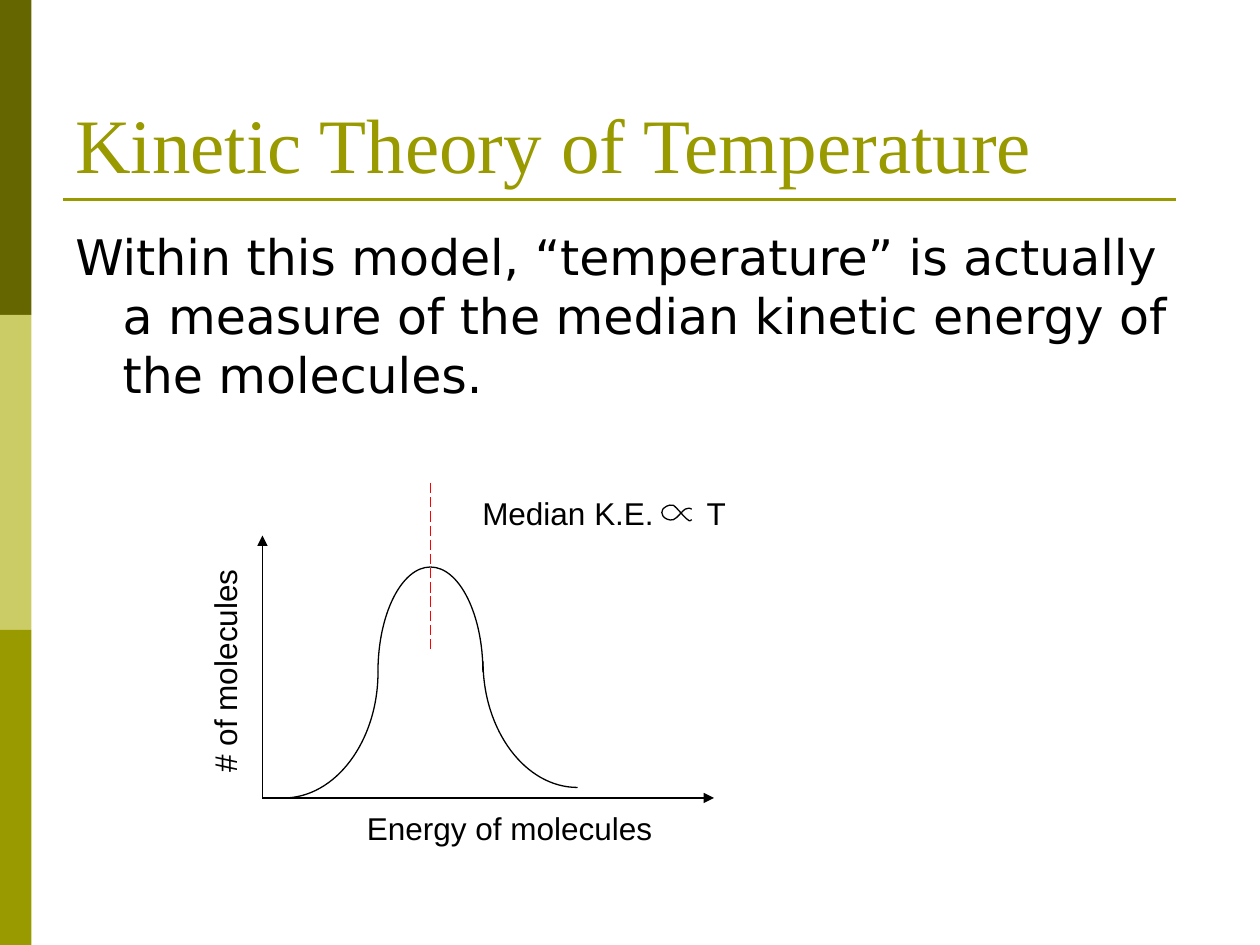
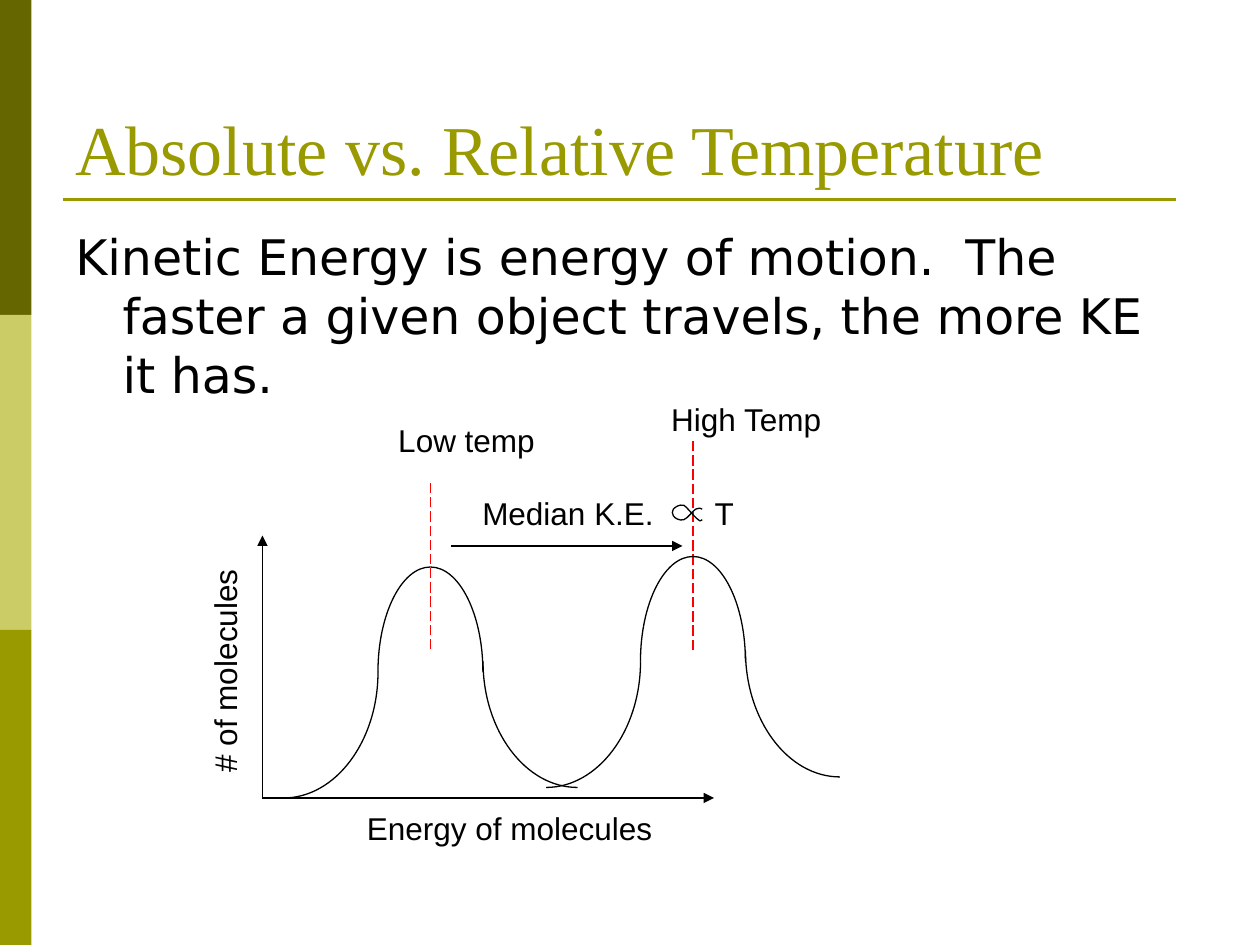
from lxml import etree
from pptx import Presentation
from pptx import util as u
from pptx.dml import color
from pptx.enum import dml, shapes, text
from pptx.oxml import ns

PX = 9525  # 96 px to the inch
OLIVE, DARK, PALE = "999900", "666600", "CCCC66"
BLACK, RED = "000000", "FF0000"
TITLE, BODY, LABEL = "Times New Roman", "DejaVu Sans", "Arial"
BEND = 0.55  # control length of a quarter ellipse, as a share of its radius

# The "proportional to" sign: a start, then two controls and an end per curve
LOOPS = [
    (23, 4),
    (22, 3), (21, 3), (18, 4),
    (16, 5), (12, 11), (9, 12),
    (6, 13), (2, 11), (1, 9),
    (0, 8), (0, 5), (1, 4),
    (2, 3), (5, 0), (9, 1),
    (12, 3), (17, 10), (20, 12),
    (22, 14), (22, 12), (23, 12),
]


def px(*vals):
    return [round(v * PX) for v in vals]


def rgb(code):
    return color.RGBColor.from_string(code)


def sub(node, tag, **attrs):
    return etree.SubElement(node, ns.qn(tag), **attrs)


def write(slide, box, words, size, font, hue=BLACK, wrap=True):
    shape = slide.shapes.add_textbox(*px(*box))
    frame = shape.text_frame
    frame.word_wrap = wrap
    frame.text = words
    face = frame.paragraphs[0].runs[0].font
    face.size, face.name = u.Pt(size), font
    face.color.rgb = rgb(hue)
    return shape


def label(slide, left, top, width, words, wrap=False):
    return write(slide, (left, top, width, 38), words, 18, LABEL, wrap=wrap)


def line(slide, ends, hue=BLACK, width=0.75, arrow=False, dash=False):
    link = slide.shapes.add_connector(shapes.MSO_CONNECTOR.STRAIGHT, *px(*ends))
    link.line.color.rgb = rgb(hue)
    link.line.width = u.Pt(width)
    if dash:
        link.line.dash_style = dml.MSO_LINE.LONG_DASH
    if arrow:
        sub(link.line._get_or_add_ln(), "a:tailEnd", type="triangle")
    sub(link._element.spPr, "a:effectLst")


def curve(parent, points):
    """Draw an open cubic curve: a start, then two controls and an end each."""
    spots = [px(*p) for p in points]
    pen = parent.build_freeform(*spots[0], scale=1.0)
    pen.add_line_segments(spots[1:], close=False)
    shape = pen.convert_to_shape()
    shape.shadow.inherit = False
    shape.fill.background()
    shape.line.color.rgb = rgb(BLACK)
    shape.line.width = u.Pt(0.75)
    steps = list(shape._element.iter(ns.qn("a:lnTo")))
    for i in range(0, len(steps), 3):
        bend = sub(steps[i].getparent(), "a:cubicBezTo")
        for step in steps[i:i + 3]:
            bend.append(step[0])
            step.getparent().remove(step)


def arc(parent, x, y, rx, ry):
    """Draw a quarter ellipse about x, y; the signs of rx, ry pick the quarter."""
    curve(parent, [(x, y + ry), (x + BEND * rx, y + ry),
                   (x + rx, y + BEND * ry), (x + rx, y)])


def peak(parent, x, y):
    """Draw a bell curve with its top at x, y."""
    arc(parent, x, y + 80, -40, -80)
    arc(parent, x, y + 80, 40, -80)
    arc(parent, x + 112, y + 72, -72, 96)
    arc(parent, x - 112, y + 80, 72, 96)


def median(slide, left, top, stop, gap):
    """Write the relation, with T at the tab stop and the sign at the gap."""
    shape = label(slide, left, top, 211, "Median K.E.\tT", wrap=True)
    props = shape.text_frame.paragraphs[0]._p.get_or_add_pPr()
    sub(sub(props, "a:tabLst"), "a:tab", pos=str(stop * PX), algn="l")
    curve(slide.shapes, [(left + gap + x, top + 12 + y) for x, y in LOOPS])


def graph(slide, left, top, parent):
    """Draw the axes with their names, and the first peak in parent."""
    x, y = left + 116, top + 308
    line(slide, (x, y, x, y - 200), arrow=True)
    line(slide, (x, y, x + 344, y), arrow=True)
    peak(parent, left + 244, top + 132)
    label(slide, left, top + 192, 174, "# of molecules").rotation = 270
    label(slide, left + 186, top + 312, 237, "Energy of molecules")
    line(slide, (left + 244, top + 68, left + 244, top + 196), RED, dash=True)


def hotter(slide, left, top):
    """Add the second peak and the step that leads to it."""
    line(slide, (left + 260, top + 116, left + 436, top + 116), arrow=True)
    line(slide, (left + 444, top + 36, left + 444, top + 196), RED, dash=True)
    peak(slide.shapes.add_group_shape().shapes, left + 444, top + 124)
    label(slide, left + 210, top + 16, 123, "Low temp")
    label(slide, left + 418, top, 136, "High Temp")


def bands(slide):
    for i, hue in enumerate((DARK, PALE, OLIVE)):
        band = slide.shapes.add_shape(shapes.MSO_SHAPE.RECTANGLE,
                                      *px(0, 240 * i, 24, 240))
        band.shadow.inherit = False
        band.fill.solid()
        band.fill.fore_color.rgb = rgb(hue)
        band.line.fill.background()
    line(slide, (48, 152, 896, 152), OLIVE, 1.5)


def page(deck, title, size, words):
    slide = deck.slides.add_slide(deck.slide_layouts[6])
    bands(slide)
    head = write(slide, (48, 29, 864, 120), title, size, TITLE, OLIVE)
    head.text_frame.vertical_anchor = text.MSO_ANCHOR.BOTTOM
    body = write(slide, (48, 168, 864, 205), words, 28, BODY)
    props = body.text_frame.paragraphs[0]._p.get_or_add_pPr()
    props.set("marL", str(36 * PX))
    props.set("indent", str(-36 * PX))
    return slide


def main():
    deck = Presentation()
    deck.slide_width, deck.slide_height = px(960, 720)
    left, top = 84, 300

    slide = page(deck, "Kinetic Theory of Temperature", 44,
                 "Within this model, “temperature” is actually a measure of "
                 "the median kinetic energy of the molecules.")
    graph(slide, left, top, slide.shapes)
    median(slide, left + 274, top + 72, 171, 146)

    slide = page(deck, "Absolute vs. Relative Temperature", 40,
                 "Kinetic Energy is energy of motion.  The faster a given "
                 "object travels, the more KE it has.")
    graph(slide, left, top, slide.shapes.add_group_shape().shapes)
    hotter(slide, left, top)
    median(slide, left + 274, top + 72, 177, 154)

    deck.save("out.pptx")


if __name__ == "__main__":
    main()
